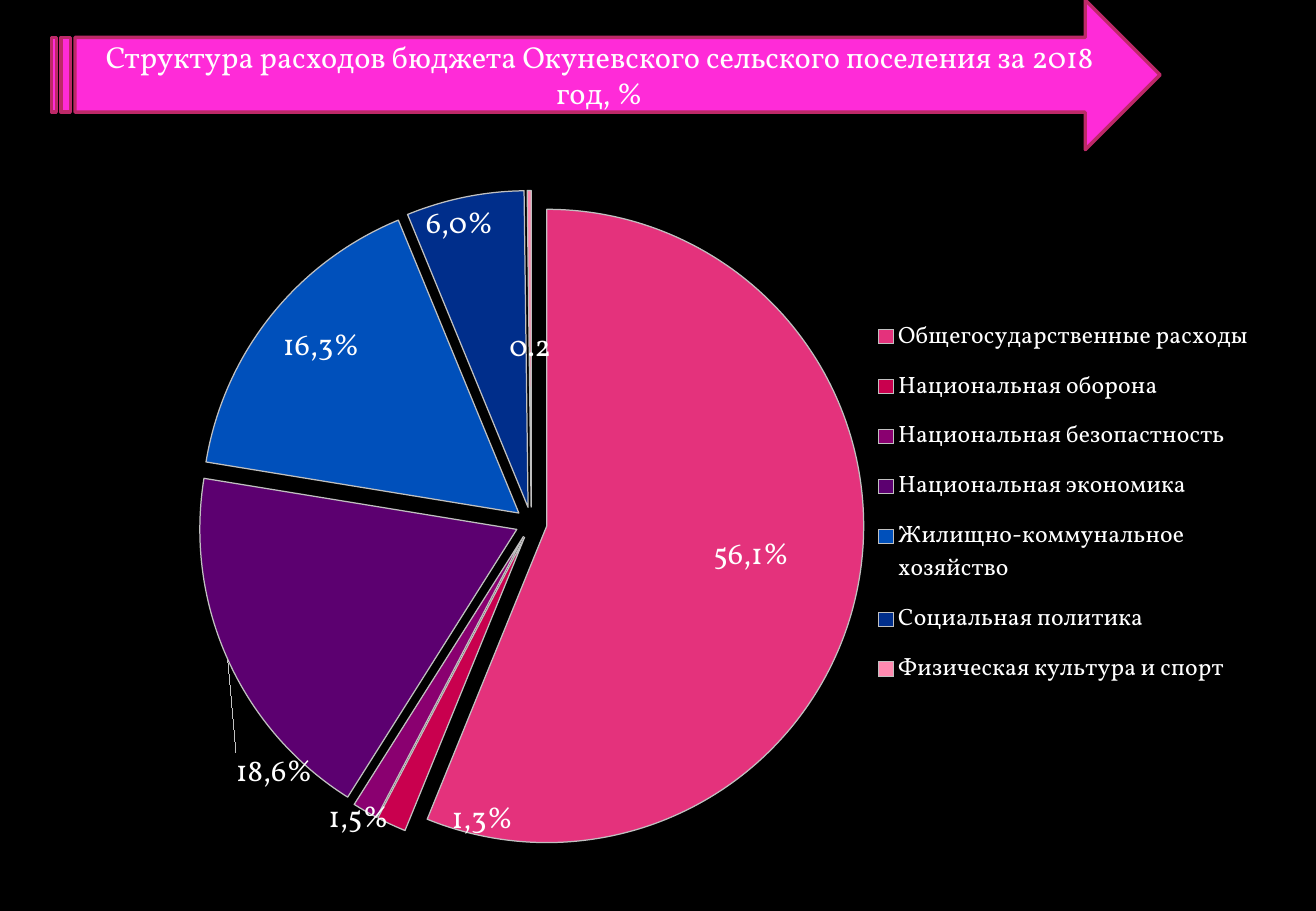
from lxml import etree
from pptx import Presentation
from pptx.chart.data import CategoryChartData
from pptx.dml.color import RGBColor
from pptx.enum.chart import XL_CHART_TYPE as ChartType
from pptx.enum.chart import XL_LABEL_POSITION as LabelPosition
from pptx.enum.chart import XL_LEGEND_POSITION as LegendPosition
from pptx.enum.shapes import MSO_SHAPE as Shape
from pptx.enum.text import MSO_ANCHOR as Anchor
from pptx.enum.text import MSO_AUTO_SIZE as AutoSize
from pptx.enum.text import PP_ALIGN as Align
from pptx.oxml.ns import qn
from pptx.util import Cm, Pt

BLACK = RGBColor(0x00, 0x00, 0x00)
WHITE = RGBColor(0xFF, 0xFF, 0xFF)
MAGENTA = RGBColor(0xFF, 0x2B, 0xD8)
CRIMSON = RGBColor(0xBD, 0x29, 0x68)
GREY = RGBColor(0xC0, 0xC0, 0xC0)
PINK = RGBColor(0xE4, 0x32, 0x7C)
RED = RGBColor(0xC9, 0x00, 0x4E)
PURPLE = RGBColor(0x8A, 0x00, 0x70)
VIOLET = RGBColor(0x5C, 0x00, 0x70)
BLUE = RGBColor(0x00, 0x50, 0xBB)
NAVY = RGBColor(0x00, 0x2E, 0x8B)
ROSE = RGBColor(0xFF, 0x8A, 0xB0)

TITLE = "Структура расходов бюджета Окуневского сельского поселения за 2018 год, %"

# category, value, colour, label text, label shift as a share of the chart
EXPENSES = [
    ("Общегосударственные расходы", 56.1, PINK, "56,1%", (0.04, 0)),
    ("Национальная оборона", 1.5, RED, "1,3%", (0.02, 0.21)),
    ("Национальная безопастность", 1.3, PURPLE, "1,5%", (-0.07, 0.22)),
    ("Национальная экономика", 18.6, VIOLET, "18,6%", (-0.08, 0.27)),
    ("Жилищно-коммунальное хозяйство", 16.2, BLUE, "16,3%", (-0.06, -0.1)),
    ("Социальная политика", 6, NAVY, "6,0%", (-0.03, -0.19)),
    ("Физическая культура и спорт", 0.2, ROSE, None, None),
]


def make_layout(**settings):
    """Return a c:layout element with the given manual settings."""
    layout = etree.Element(qn("c:layout"))
    manual = etree.SubElement(layout, qn("c:manualLayout"))
    for name, value in settings.items():
        etree.SubElement(manual, qn(f"c:{name}")).set("val", str(value))
    return layout


def remove_layout(element):
    for layout in element.findall(qn("c:layout")):
        element.remove(layout)


class BudgetSlide:
    font_name = "Vollkorn"
    text_size = Pt(18)
    legend_size = Pt(14)

    def __init__(self, deck):
        self.page = deck.slides.add_slide(deck.slide_layouts[5])
        background = self.page.background.fill
        background.solid()
        background.fore_color.rgb = BLACK

    def style_font(self, font, size):
        font.name = self.font_name
        font.size = size
        font.color.rgb = WHITE

    def add_arrow(self, left, top, width, height):
        arrow = self.page.shapes.add_shape(
            Shape.STRIPED_RIGHT_ARROW, left, top, width, height)
        arrow.shadow.inherit = False
        arrow.fill.solid()
        arrow.fill.fore_color.rgb = MAGENTA
        arrow.line.color.rgb = CRIMSON
        arrow.line.width = Pt(2)

    def add_title(self, text, left, top, width, height):
        title = self.page.shapes.title
        title.left, title.top, title.width, title.height = left, top, width, height
        # Bring the title in front of the arrow
        self.page.shapes.element.append(title.element)
        frame = title.text_frame
        frame.text = text
        frame.word_wrap = True
        frame.auto_size = AutoSize.NONE
        frame.vertical_anchor = Anchor.MIDDLE
        para = frame.paragraphs[0]
        para.alignment = Align.CENTER
        self.style_font(para.runs[0].font, self.text_size)

    def add_pie(self, expenses, left, top, width, height):
        data = CategoryChartData()
        data.categories = [expense[0] for expense in expenses]
        data.add_series("Series 1", [expense[1] for expense in expenses])
        chart = self.page.shapes.add_chart(
            ChartType.PIE, left, top, width, height, data).chart
        chart.has_title = False
        self.style_font(chart.font, self.text_size)
        self.add_legend(chart)

        plot = chart.plots[0]
        plot.vary_by_categories = True
        series = plot.series[0]
        series.format.line.color.rgb = GREY
        labels = series.data_labels
        labels.show_value = True
        labels.position = LabelPosition.CENTER
        self.style_font(labels.font, self.text_size)
        for point_index, (_, _, colour, text, _) in enumerate(expenses):
            point = series.points[point_index]
            point.format.fill.solid()
            point.format.fill.fore_color.rgb = colour
            point.format.line.color.rgb = GREY
            point.format.line.width = Pt(0.75)
            if text:
                self.add_label(point, text)
        self.place_parts(chart.element, expenses)

    def add_label(self, point, text):
        label = point.data_label
        label.text_frame.text = text
        self.style_font(label.text_frame.paragraphs[0].runs[0].font, self.text_size)
        label.position = LabelPosition.CENTER

    def add_legend(self, chart):
        chart.has_legend = True
        legend = chart.legend
        legend.position = LegendPosition.RIGHT
        legend.include_in_layout = False
        self.style_font(legend.font, self.legend_size)

    def place_parts(self, root, expenses):
        """Explode the pie and place the plot, the legend and the moved labels."""
        explosion = etree.Element(qn("c:explosion"))
        explosion.set("val", "5")
        next(root.iter(qn("c:ser"))).find(qn("c:spPr")).addnext(explosion)
        area = next(root.iter(qn("c:plotArea")))
        remove_layout(area)
        area.insert(0, make_layout(
            layoutTarget="inner", xMode="edge", yMode="edge",
            x=0.04, y=0, w=0.72, h=1))
        legend = next(root.iter(qn("c:legend")))
        remove_layout(legend)
        legend.find(qn("c:legendPos")).addnext(make_layout(
            xMode="edge", yMode="edge", x=0.68, y=0.17, w=0.31, h=0.6))
        for label in root.iter(qn("c:dLbl")):
            mark = label.find(qn("c:idx"))
            x, y = expenses[int(mark.get("val"))][4]
            mark.addnext(make_layout(x=x, y=y))


def main():
    deck = Presentation()
    deck.slide_width, deck.slide_height = Cm(27.52), Cm(19.05)
    slide = BudgetSlide(deck)
    slide.add_arrow(Cm(1.08), Cm(0), Cm(23.18), Cm(3.13))
    slide.add_title(TITLE, Cm(1.58), Cm(0.78), Cm(21.92), Cm(1.56))
    slide.add_pie(EXPENSES, Cm(0.87), Cm(3.97), Cm(25.6), Cm(13.92))
    deck.save("out.pptx")


if __name__ == "__main__":
    main()
